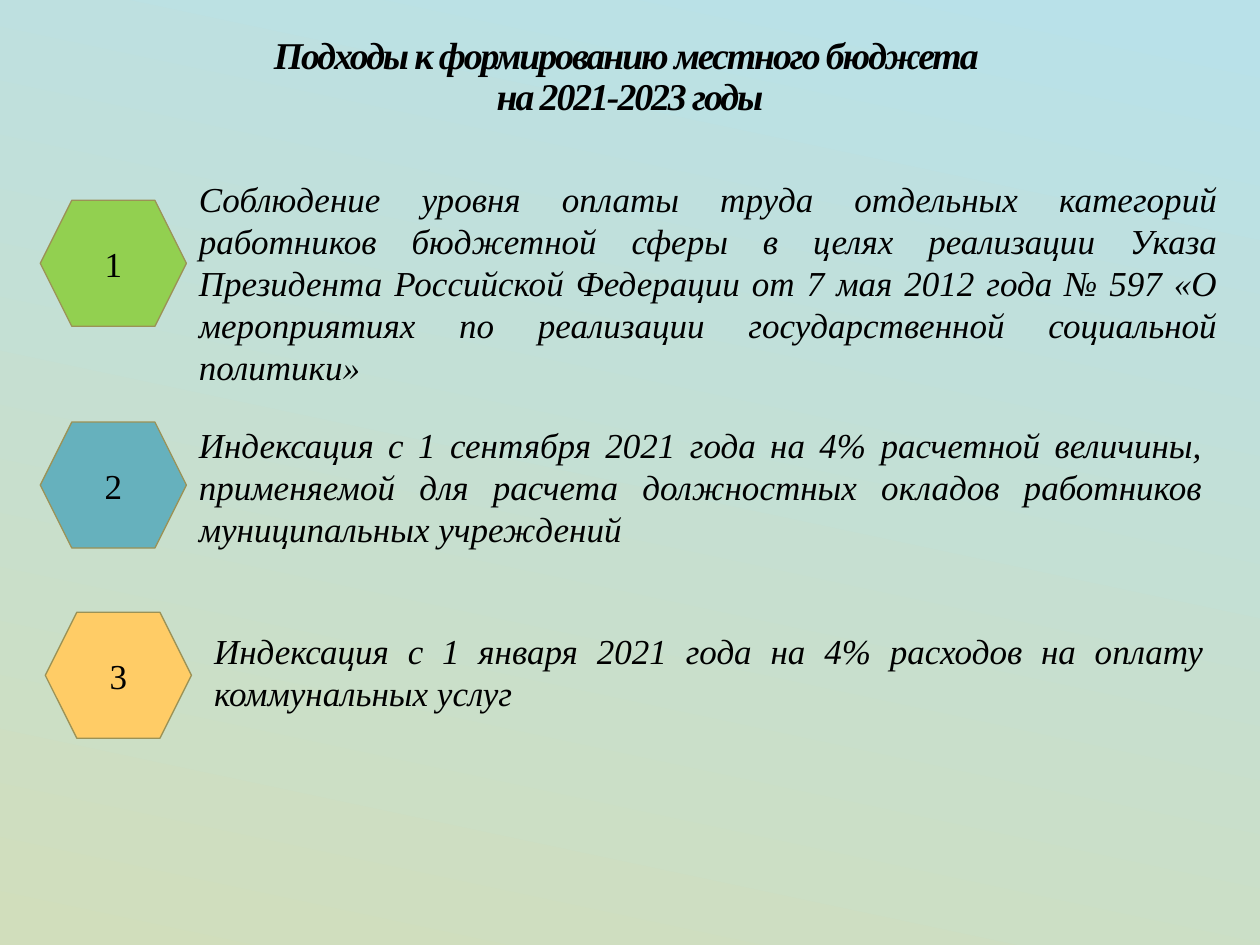
import pptx
import pptx.util
import pptx.dml.color
import pptx.enum.shapes
import pptx.enum.text

theme = {
    "font": "Times New Roman", "ink": "000000", "edge": "9B9256",
    "sky": "B9E1E9", "sand": "D1DEBC",
    "green": "92D050", "teal": "66B1BD", "gold": "FFCC66",
    "head": 21.6, "body": 20, "line": 0.75,
}
Align = pptx.enum.text.PP_ALIGN
Anchor = pptx.enum.text.MSO_ANCHOR


def tint(name):
    return pptx.dml.color.RGBColor.from_string(theme[name])


def write(shape, text, size, align, anchor, bold=False, slant=False):
    frame = shape.text_frame
    frame.word_wrap = True
    frame.vertical_anchor = anchor
    frame.text = text
    para = frame.paragraphs[0]
    para.alignment = align
    for run in para.runs:
        font = run.font
        font.name, font.size = theme["font"], pptx.util.Pt(theme[size])
        font.bold, font.italic = bold, slant
        font.color.rgb = tint("ink")
    return para


deck = pptx.Presentation()
deck.slide_width = pptx.util.Inches(10)
deck.slide_height = pptx.util.Inches(7.5)
slide = deck.slides.add_slide(deck.slide_layouts[6])

# Grid of 100 columns by 75 rows
col = deck.slide_width / 100
row = deck.slide_height / 75

# Background fade, blue at the top to green at the bottom
fill = slide.background.fill
fill.gradient()
fill.gradient_angle = 360 - 102
for stop, name, place in zip(fill.gradient_stops, ("sky", "sand"), (0.02, 1)):
    stop.color.rgb = tint(name)
    stop.position = place

# Title
title = slide.shapes.add_textbox(
    int(5 * col), int(3 * row), int(90 * col), int(6.4 * row))
title.text_frame.margin_top = title.text_frame.margin_bottom = 0
para = write(title, "Подходы к формированию местного бюджета \vна 2021-2023 годы",
             "head", Align.CENTER, Anchor.MIDDLE, bold=True, slant=True)
para.line_spacing = 0.9
for run in para.runs:
    run.font._element.set("spc", "-120")

# Points: colour, badge left and top, text left, top, width, height, wording
points = [
    ("green", 3.2, 15.9, 14.8, 13.6, 82.8, 17.8,
     "Соблюдение уровня оплаты труда отдельных категорий работников "
     "бюджетной сферы в целях реализации Указа Президента Российской "
     "Федерации от 7 мая 2012 года № 597 «О мероприятиях по реализации "
     "государственной социальной политики»"),
    ("teal", 3.2, 33.5, 14.8, 33.1, 81.6, 11.1,
     "Индексация с 1 сентября 2021 года на 4% расчетной величины, "
     "применяемой для расчета должностных окладов работников "
     "муниципальных учреждений"),
    ("gold", 3.6, 48.6, 16, 49.5, 80.5, 7.7,
     "Индексация с 1 января 2021 года на 4% расходов на оплату "
     "коммунальных услуг"),
]
for num, (hue, left, top, x, y, wide, high, text) in enumerate(points, 1):
    # Wording
    box = slide.shapes.add_textbox(
        int(x * col), int(y * row), int(wide * col), int(high * row))
    write(box, text, "body", Align.JUSTIFY, Anchor.TOP, slant=True)

    # Numbered badge
    badge = slide.shapes.add_shape(
        pptx.enum.shapes.MSO_SHAPE.HEXAGON,
        int(left * col), int(top * row), int(11.6 * col), int(10 * row))
    badge.shadow.inherit = False
    badge.fill.solid()
    badge.fill.fore_color.rgb = tint(hue)
    badge.line.color.rgb = tint("edge")
    badge.line.width = pptx.util.Pt(theme["line"])
    write(badge, str(num), "body", Align.CENTER, Anchor.MIDDLE)

deck.save("out.pptx")
